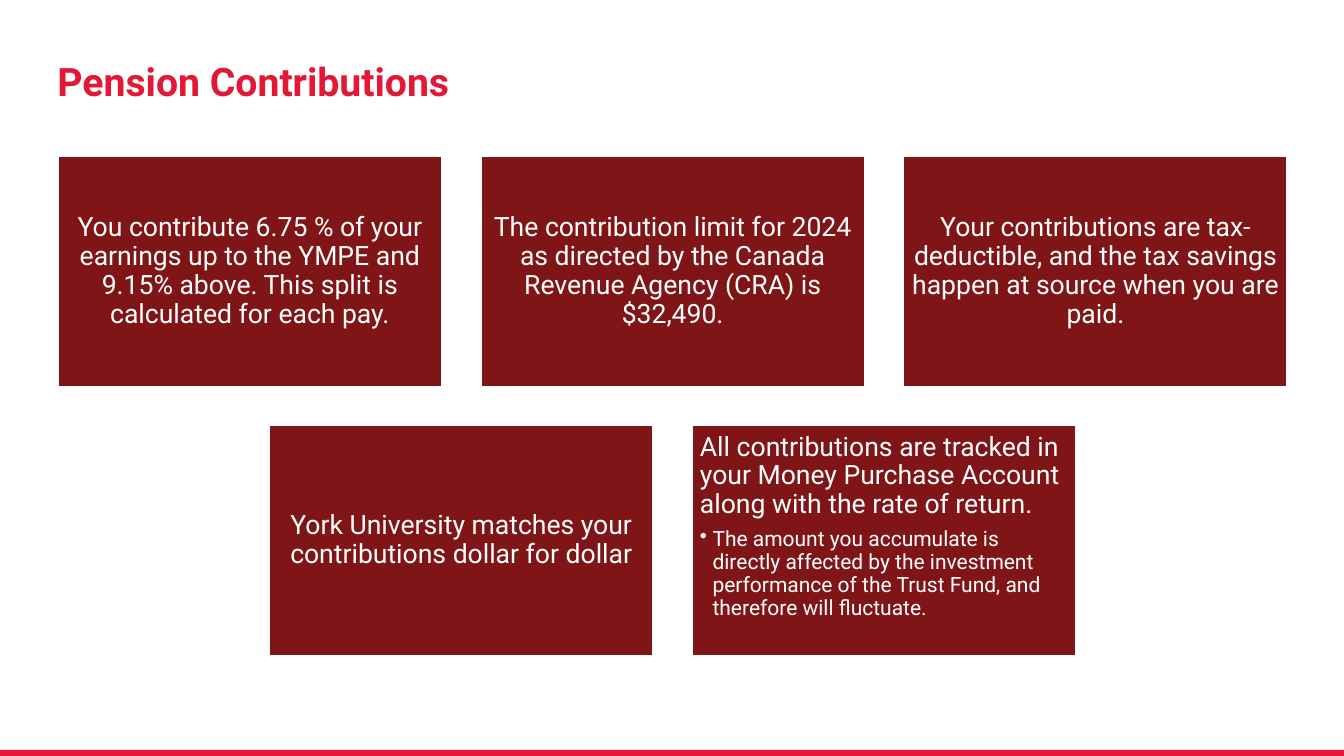
from lxml.etree import SubElement
from pptx import Presentation
from pptx.dml.color import RGBColor
from pptx.enum.shapes import MSO_SHAPE
from pptx.enum.text import MSO_ANCHOR, PP_ALIGN
from pptx.oxml.ns import qn
from pptx.util import Pt

COLOURS = {"red": "E31837", "maroon": "7F1516", "white": "FFFFFF"}
FONT = "Roboto"
PAGE_WIDTH, PAGE_HEIGHT = 960, 540
CARD_WIDTH, CARD_HEIGHT, GAP = 274.4, 164.6, 27.6

CARD_ROWS = [
    [
        ["You contribute 6.75 % of your earnings up to the YMPE and 9.15% above. "
         "This split is calculated for each pay."],
        ["The contribution limit for 2024 as directed by the Canada Revenue Agency "
         "(CRA) is $32,490."],
        ["Your contributions are tax-deductible, and the tax savings happen at source "
         "when you are paid."],
    ],
    [
        ["York University matches your contributions dollar for dollar"],
        ["All contributions are tracked in your Money Purchase Account along with "
         "the rate of return.",
         "The amount you accumulate is directly affected by the investment performance "
         "of the Trust Fund, and therefore will fluctuate."],
    ],
]


def colour(name):
    return RGBColor.from_string(COLOURS[name])


def set_frame(frame, inset, anchor):
    frame.word_wrap = True
    frame.vertical_anchor = anchor
    frame.margin_left = frame.margin_right = Pt(inset)
    frame.margin_top = frame.margin_bottom = Pt(inset)


def write(para, text, size, ink="white", bold=False, align=PP_ALIGN.LEFT,
          line_spacing=0.9, space_after=0, bullet_indent=0):
    """Fill a paragraph; a bullet indent above zero makes it a bullet."""
    para.alignment = align
    para.line_spacing = line_spacing
    para.space_after = Pt(space_after)
    if bullet_indent:
        properties = para._p.get_or_add_pPr()
        properties.set("marL", str(Pt(bullet_indent)))
        properties.set("indent", str(-Pt(bullet_indent)))
        SubElement(properties, qn("a:buChar"), char="•")
    span = para.add_run()
    span.text = text
    span.font.name = FONT
    span.font.size = Pt(size)
    span.font.bold = bold
    span.font.color.rgb = colour(ink)


def add_rectangle(page, left, top, width, height, fill):
    box = page.shapes.add_shape(MSO_SHAPE.RECTANGLE, Pt(left), Pt(top), Pt(width), Pt(height))
    box.shadow.inherit = False
    box.fill.solid()
    box.fill.fore_color.rgb = colour(fill)
    box.line.fill.background()
    return box


def add_title(page, text, left, top, width, height):
    box = page.shapes.add_textbox(Pt(left), Pt(top), Pt(width), Pt(height))
    set_frame(box.text_frame, 0, MSO_ANCHOR.BOTTOM)
    write(box.text_frame.paragraphs[0], text, 28, ink="red", bold=True, line_spacing=0.85)


def add_card(page, texts, left, top):
    """Draw a card: a lone statement is centred, one with details reads from the top left."""
    box = add_rectangle(page, left, top, CARD_WIDTH, CARD_HEIGHT, "maroon")
    box.line.color.rgb = colour("white")
    box.line.width = Pt(1.5)
    statement, *details = texts
    frame = box.text_frame
    set_frame(frame, 5.7, MSO_ANCHOR.TOP if details else MSO_ANCHOR.MIDDLE)
    write(frame.paragraphs[0], statement, 19, space_after=6.65 if details else 0,
          align=PP_ALIGN.LEFT if details else PP_ALIGN.CENTER)
    for detail in details:
        write(frame.add_paragraph(), detail, 15, space_after=2.25, bullet_indent=9)


def add_card_grid(page, rows, left, top, width):
    """Stack the rows of cards, each row centred in the width."""
    for row_index, row in enumerate(rows):
        row_width = len(row) * (CARD_WIDTH + GAP) - GAP
        row_left = left + (width - row_width) / 2
        row_top = top + row_index * (CARD_HEIGHT + GAP)
        for column, texts in enumerate(row):
            add_card(page, texts, row_left + column * (CARD_WIDTH + GAP), row_top)


def main():
    deck = Presentation()
    deck.slide_width, deck.slide_height = Pt(PAGE_WIDTH), Pt(PAGE_HEIGHT)
    page = deck.slides.add_slide(deck.slide_layouts[6])
    add_rectangle(page, 0, 535.6, PAGE_WIDTH, 4.4, "red")
    add_title(page, "Pension Contributions", 41, 18, 879, 57)
    add_card_grid(page, CARD_ROWS, 41, 111.6, 879)
    deck.save("out.pptx")


if __name__ == "__main__":
    main()
